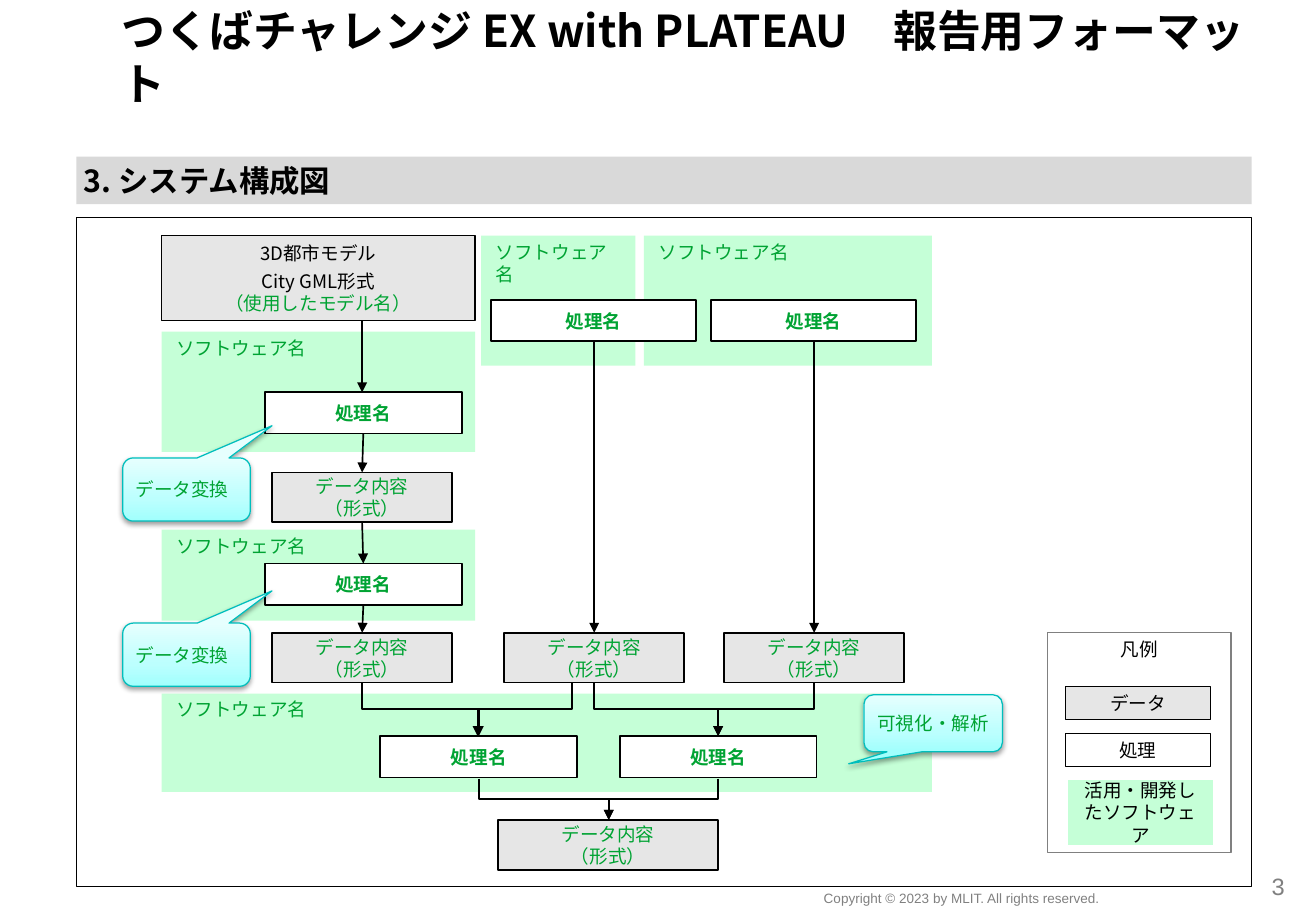
import copy

import lxml.etree
import pptx
import pptx.dml.color
import pptx.enum.shapes
import pptx.enum.text
import pptx.oxml
import pptx.oxml.ns
import pptx.util

PX = 9144  # 100 px to the inch
FONT = "Noto Sans CJK JP"
COLORS = {
    "black": "000000", "white": "FFFFFF", "gray": "808080", "band": "D9D9D9",
    "data": "E6E6E6", "software": "C5FFD7", "green": "00A333", "teal": "00BEBC",
}
CALLOUT_STOPS = [(0, "A1FFFD"), (35, "BCFFFE"), (100, "E6FFFE")]
SHAPE = pptx.enum.shapes.MSO_SHAPE
CONNECTOR = pptx.enum.shapes.MSO_CONNECTOR
ALIGN = pptx.enum.text.PP_ALIGN
ANCHOR = pptx.enum.text.MSO_ANCHOR
DATA_TEXT = "データ内容\v（形式）"
PROCESS_TEXT = "処理名"
DRAWING = pptx.oxml.ns.nsdecls("a")
qn = pptx.oxml.ns.qn


def px(*lengths):
    return [pptx.util.Emu(round(length * PX)) for length in lengths]


def rgb(name):
    return pptx.dml.color.RGBColor.from_string(COLORS[name])


def set_all(target, values):
    for name, value in values.items():
        setattr(target, name, value)


def write(box, paragraphs, size=11, color="black", bold=False, align=ALIGN.CENTER,
          anchor=ANCHOR.MIDDLE, insets=(8, 8, 8, 8), after=0, wrap=True, font=FONT):
    frame = box.text_frame
    left, top, right, bottom = px(*insets)
    set_all(frame, {"margin_left": left, "margin_top": top, "margin_right": right,
                    "margin_bottom": bottom, "vertical_anchor": anchor, "word_wrap": wrap})
    for index, text in enumerate(paragraphs):
        para = frame.paragraphs[0] if index == 0 else frame.add_paragraph()
        para.text = text
        set_all(para, {"alignment": align, "space_after": pptx.util.Pt(after)})
        for span in para.runs:
            set_all(span.font, {"name": font, "size": pptx.util.Pt(size), "bold": bold})
            span.font.color.rgb = rgb(color)
            properties = span._r.get_or_add_rPr()
            lxml.etree.SubElement(properties, qn("a:ea")).set("typeface", font)
        for line_break in para._p.findall(qn("a:br")):
            line_break.insert(0, copy.deepcopy(para.runs[0]._r.rPr))


def add_box(page, at, kind=SHAPE.FLOWCHART_PROCESS, fill=None, line=None, width=1.0):
    box = page.shapes.add_shape(kind, *px(*at))
    box.shadow.inherit = False
    if fill:
        box.fill.solid()
        box.fill.fore_color.rgb = rgb(fill)
    else:
        box.fill.background()
    if line:
        box.line.color.rgb = rgb(line)
        box.line.width = pptx.util.Pt(width)
    else:
        box.line.fill.background()
    return box


def add_label(page, at, text, size):
    box = page.shapes.add_textbox(*px(*at))
    write(box, [text], size, "gray", anchor=ANCHOR.TOP, insets=(4, 4, 4, 4), font="Arial")


def add_software(page, *at):
    box = add_box(page, at, SHAPE.ROUNDED_RECTANGLE, "software")
    box.adjustments[0] = 0
    write(box, ["ソフトウェア名"], color="green", align=ALIGN.LEFT,
          anchor=ANCHOR.TOP, insets=(12, 4, 12, 12))


def add_data(page, left, top, width=148):
    box = add_box(page, (left, top, width, 41), fill="data", line="black")
    write(box, [DATA_TEXT], color="green", after=3)


def add_process(page, left, top, width=162):
    box = add_box(page, (left, top, width, 34), fill="white", line="black")
    write(box, [PROCESS_TEXT], color="green", bold=True, after=3)


def add_callout(page, at, text, tip, align):
    box = add_box(page, at, SHAPE.ROUNDED_RECTANGULAR_CALLOUT, "white", "teal", 0.75)
    for index, value in enumerate((*tip, 0.167)):
        box.adjustments[index] = value
    stops = "".join(f'<a:gs pos="{pos * 1000}"><a:srgbClr val="{color}"/></a:gs>'
                    for pos, color in CALLOUT_STOPS)
    properties = box._element.spPr
    properties.replace(properties.find(qn("a:solidFill")), pptx.oxml.parse_xml(
        f'<a:gradFill {DRAWING} rotWithShape="1"><a:gsLst>{stops}</a:gsLst>'
        '<a:lin ang="16200000" scaled="0"/></a:gradFill>'))
    properties.find(qn("a:effectLst")).append(pptx.oxml.parse_xml(
        f'<a:outerShdw {DRAWING} blurRad="40000" dist="20000" dir="5400000" rotWithShape="0">'
        '<a:srgbClr val="000000"><a:alpha val="38000"/></a:srgbClr></a:outerShdw>'))
    write(box, [text], color="green", align=align, after=3, wrap=False)


def add_arrow(page, x1, y1, x2, y2, bent=False):
    """Draw a downward arrow; a bent one leaves and arrives vertically."""
    kind, ends = CONNECTOR.STRAIGHT, (x1, y1, x2, y2)
    if bent:
        kind = CONNECTOR.ELBOW
        middle_x, middle_y = (x1 + x2) / 2, (y1 + y2) / 2
        half_w, half_h = abs(x2 - x1) / 2, (y2 - y1) / 2
        side = half_h if x2 > x1 else -half_h
        ends = (middle_x + side, middle_y - half_w, middle_x - side, middle_y + half_w)
    arrow = page.shapes.add_connector(kind, *px(*ends))
    arrow.line.color.rgb = rgb("black")
    arrow.line.width = pptx.util.Pt(1)
    properties = arrow._element.spPr
    if bent:
        properties.find(qn("a:xfrm")).set("rot", str((270 if x2 > x1 else 90) * 60000))
    lxml.etree.SubElement(properties.find(qn("a:ln")), qn("a:tailEnd")).set("type", "triangle")
    lxml.etree.SubElement(properties, qn("a:effectLst"))


def add_heading(page):
    title = page.shapes.title
    set_all(title, dict(zip(("left", "top", "width", "height"), px(100, 44, 928, 46))))
    write(title, ["つくばチャレンジ EX with PLATEAU　報告用フォーマット"], 26, bold=True,
          align=ALIGN.LEFT, anchor=ANCHOR.BOTTOM, insets=(0, 0, 0, 0))
    band = add_box(page, (63, 129, 967, 39), SHAPE.RECTANGLE, "band")
    write(band, ["3. システム構成図"], 18, bold=True, align=ALIGN.LEFT, insets=(6, 0, 0, 0))
    add_box(page, (63, 179, 967, 551), SHAPE.RECTANGLE, line="black", width=0.5)


def add_legend(page):
    frame = add_box(page, (862, 521, 151, 181), SHAPE.RECTANGLE, line="gray", width=0.75)
    write(frame, ["凡例"], anchor=ANCHOR.TOP, insets=(4, 4, 4, 4))
    for left, top, height, text, fill, line in (
            (877, 565, 27, "データ", "data", "black"),
            (877, 604, 27, "処理", "white", "black"),
            (879, 642, 54, "活用・開発したソフトウェア", "software", None)):
        key = add_box(page, (left, top, 119, height), fill=fill, line=line, width=0.5)
        write(key, [text], after=3)


def add_flow(page):
    for at in ((530, 194, 237, 107), (396, 194, 127, 107), (133, 273, 258, 99),
               (133, 436, 258, 75), (133, 571, 634, 81)):
        add_software(page, *at)

    model = add_box(page, (133, 194, 258, 70), fill="data", line="black")
    write(model, ["3D都市モデル", "City GML形式\v（使用したモデル名）"], after=3)
    model.text_frame.paragraphs[1].runs[-1].font.color.rgb = rgb("green")

    for left, top in ((224, 389), (224, 521), (415, 521), (596, 521)):
        add_data(page, left, top)
    add_data(page, 410, 675, 181)
    for left, top in ((218, 323), (218, 464), (313, 606), (510, 606)):
        add_process(page, left, top)
    for left in (404, 585):
        add_process(page, left, 247, 169)

    for ends in ((298, 264, 298, 323), (299, 357, 298, 389), (298, 430, 299, 464),
                 (299, 499, 298, 521), (489, 281, 489, 521), (670, 281, 670, 521)):
        add_arrow(page, *ends)
    for start, end in ((298, 394), (471, 393), (489, 591), (670, 591)):
        add_arrow(page, start, 562, end, 606, bent=True)
    for start in (394, 591):
        add_arrow(page, start, 641, 501, 675, bent=True)

    for top in (377, 513):
        add_callout(page, (101, top, 105, 52), "データ変換", (0.67, -1.01), ALIGN.LEFT)
    add_callout(page, (711, 572, 114, 47), "可視化・解析", (-0.61, 0.71), ALIGN.CENTER)


def main():
    deck = pptx.Presentation()
    deck.slide_width, deck.slide_height = px(1083, 750)
    page = deck.slides.add_slide(deck.slide_layouts[5])
    add_heading(page)
    add_legend(page)
    add_flow(page)
    add_label(page, (652, 729, 279, 21), "Copyright © 2023 by MLIT. All rights reserved.", 8)
    add_label(page, (1030, 714, 44, 32), "3", 14)
    deck.save("out.pptx")


if __name__ == "__main__":
    main()
